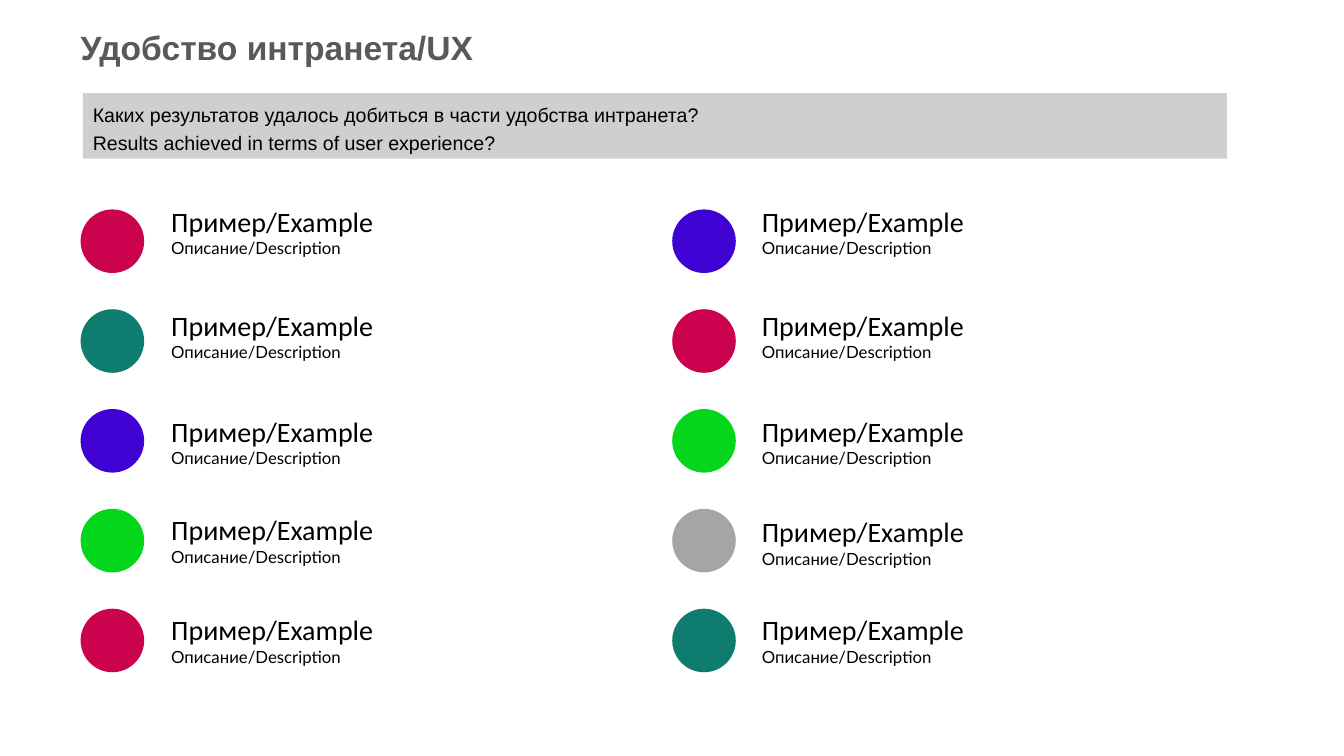
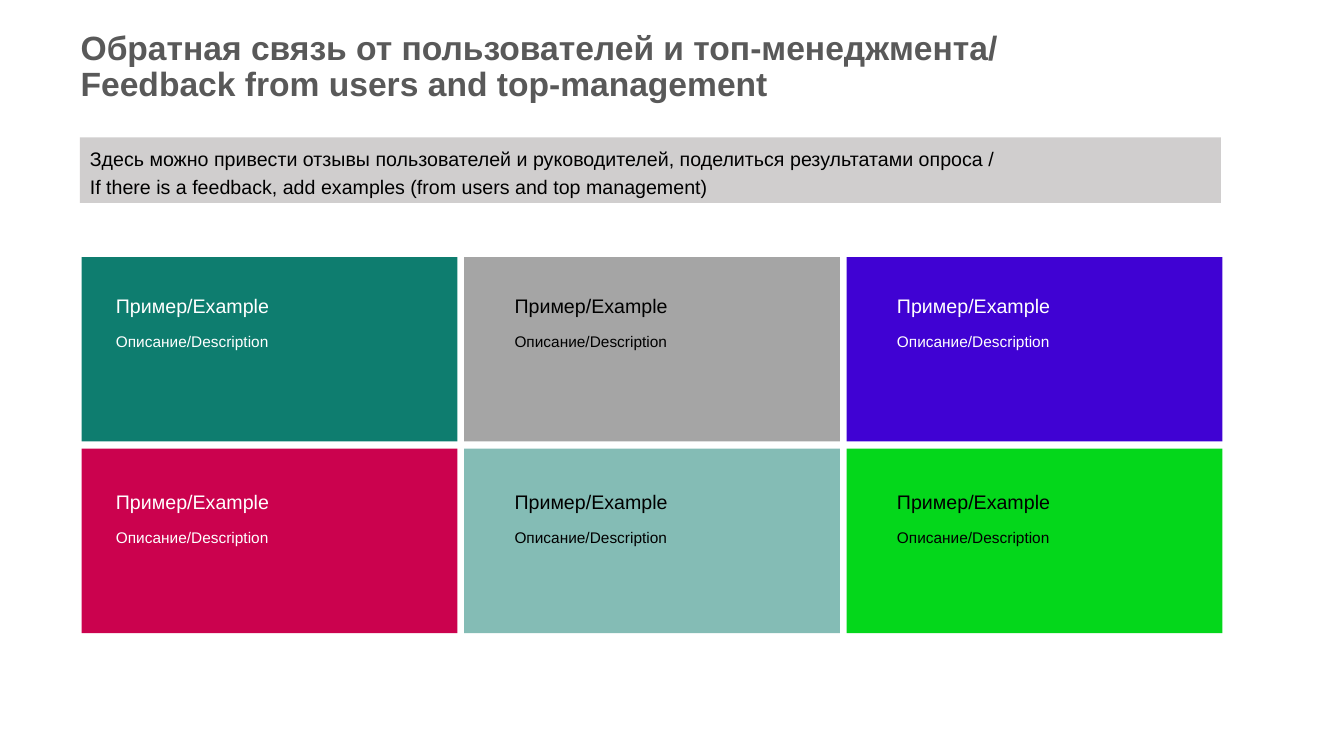
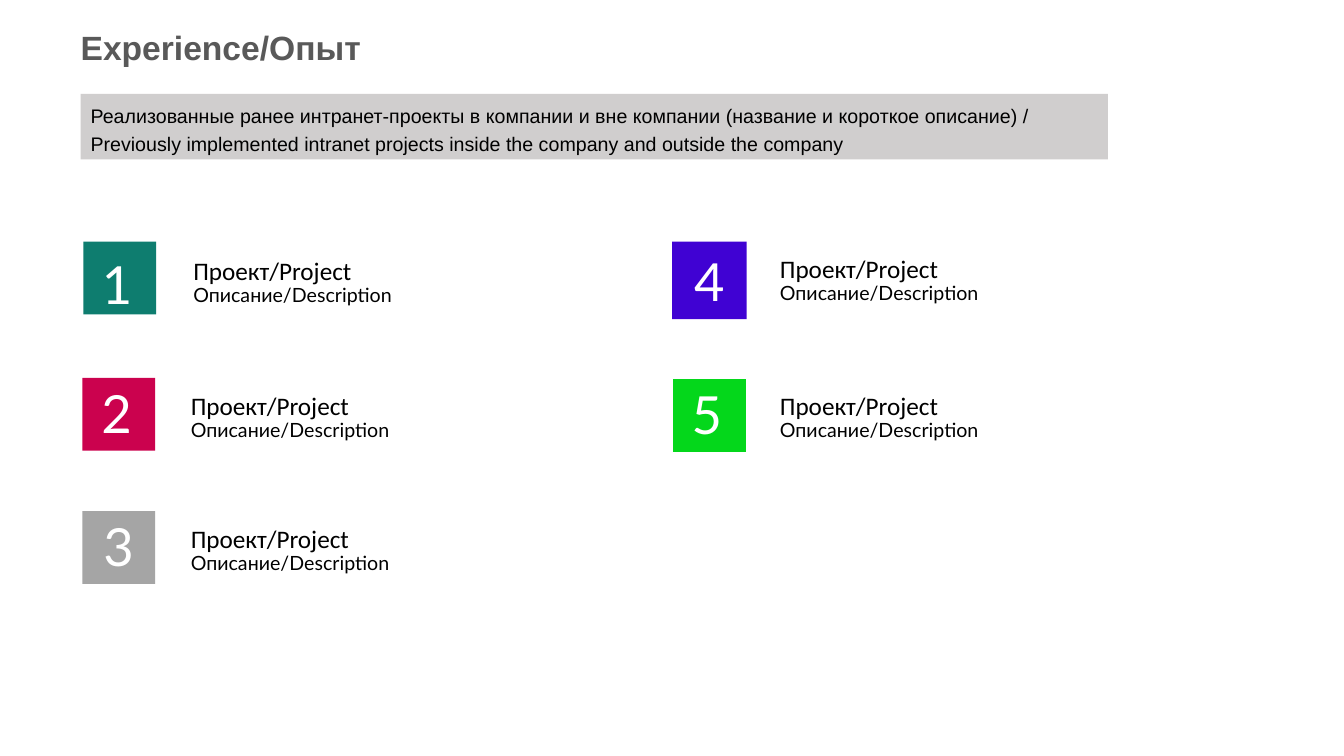
from dataclasses import dataclass
from typing import NamedTuple

from lxml import etree
from pptx import Presentation
from pptx.dml.color import RGBColor
from pptx.enum import shapes, text
from pptx.oxml import ns
from pptx.util import Pt


@dataclass(frozen=True)
class Theme:
    teal: str = "0E7D6F"
    crimson: str = "CB024E"
    violet: str = "4002D3"
    green: str = "04D71B"
    grey: str = "A5A5A5"
    band: str = "D0CECE"
    heading: str = "595959"
    black: str = "000000"
    white: str = "FFFFFF"
    sans: str = "Arial"
    name_font: str = "Calibri"
    detail_font: str = "Lato"
    heading_size: float = 24
    example_size: float = 20
    project_size: float = 18
    body_size: float = 14
    detail_size: float = 12
    card_detail_size: float = 11
    digit_size: float = 37.5


THEME = Theme()
EXAMPLE = "Пример/Example"
PROJECT = "Проект/Project"
DESCRIPTION = "Описание/Description"


class Box(NamedTuple):
    left: float
    top: float
    width: float
    height: float


class Margins(NamedTuple):
    left: float = 7.2
    top: float = 3.6
    right: float = 7.2
    bottom: float = 3.6


@dataclass(frozen=True)
class Card:
    column: int
    row: int
    fill: str
    ink: str
    opacity: int = 100


@dataclass(frozen=True)
class Project:
    number: str
    fill: str
    tile: Box
    label_left: float
    label_top: float
    digit_top: float = 2.2
    digit_right: float = 0


# Shared helpers
def set_frame(frame, margins: Margins = Margins()) -> None:
    frame.word_wrap = True
    frame.auto_size = text.MSO_AUTO_SIZE.NONE
    frame.vertical_anchor = text.MSO_ANCHOR.TOP
    frame.margin_left, frame.margin_top, frame.margin_right, frame.margin_bottom = map(Pt, margins)


def write(frame, words: str, *, size: float, font: str = THEME.sans, color: str = THEME.black,
          bold: bool = False, spacing: float = 1.0, before: float = 0,
          align=text.PP_ALIGN.LEFT) -> None:
    """Fill the empty first paragraph of the frame, or append a new one."""
    paragraph = frame.paragraphs[-1]
    if paragraph.runs:
        paragraph = frame.add_paragraph()
    paragraph.alignment = align
    paragraph.line_spacing = spacing
    paragraph.space_before = Pt(before)
    run = paragraph.add_run()
    run.text = words
    run.font.name, run.font.size, run.font.bold = font, Pt(size), bold
    run.font.color.rgb = RGBColor.from_string(color)


def add_shape(slide, box: Box, fill: str, *, kind=shapes.MSO_SHAPE.RECTANGLE, opacity: int = 100):
    shape = slide.shapes.add_shape(kind, *map(Pt, box))
    shape.shadow.inherit = False
    shape.fill.solid()
    shape.fill.fore_color.rgb = RGBColor.from_string(fill)
    shape.line.fill.background()
    if opacity < 100:
        color = shape.element.spPr.find(".//" + ns.qn("a:srgbClr"))
        etree.SubElement(color, ns.qn("a:alpha")).set("val", str(opacity * 1000))
    return shape


def add_label(slide, box: Box):
    frame = slide.shapes.add_textbox(*map(Pt, box)).text_frame
    set_frame(frame)
    return frame


def start_slide(deck, heading: str, heading_width: float, band: Box, questions: list[str]):
    """Add a slide with its heading and the grey question band."""
    slide = deck.slides.add_slide(deck.slide_layouts[5])
    title = slide.shapes.title
    title.left, title.top, title.width, title.height = map(Pt, Box(50.4, 18.7, heading_width, 51.1))
    set_frame(title.text_frame)
    write(title.text_frame, heading, size=THEME.heading_size, color=THEME.heading,
          bold=True, spacing=0.9)
    frame = add_shape(slide, band, THEME.band).text_frame
    set_frame(frame)
    for question in questions:
        write(frame, question, size=THEME.body_size, spacing=1.2)
    return slide


# Slide 1: two columns of circles with examples
def build_experience_of_users(deck) -> None:
    slide = start_slide(
        deck, "Удобство интранета/UX", 530.6, Box(59.2, 66.5, 817.2, 46.8),
        ["Каких результатов удалось добиться в части удобства интранета?",
         "Results achieved in terms of user experience?"])
    t = THEME
    columns = (
        (57.6, 115.2, (t.crimson, t.teal, t.violet, t.green, t.crimson),
         (142.6, 216.9, 292.3, 362.9, 434.2)),
        (480.2, 537.1, (t.violet, t.crimson, t.green, t.grey, t.teal),
         (142.6, 216.9, 292.3, 364.3, 434.2)),
    )
    for circle_left, label_left, fills, label_tops in columns:
        for row, (fill, label_top) in enumerate(zip(fills, label_tops)):
            add_shape(slide, Box(circle_left, 149.6 + 71.3 * row, 45.4, 45.4), fill,
                      kind=shapes.MSO_SHAPE.OVAL)
            frame = add_label(slide, Box(label_left, label_top, 191.5, 46.1))
            write(frame, EXAMPLE, size=t.example_size, font=t.name_font)
            write(frame, DESCRIPTION, size=t.detail_size, font=t.detail_font)


# Slide 2: grid of feedback cards
def build_feedback(deck) -> None:
    slide = start_slide(
        deck, "Обратная связь от пользователей и топ-менеджмента/ "
        "Feedback from users and top-management", 715.7, Box(57.1, 98.1, 815, 46.8),
        ["Здесь можно привести отзывы пользователей и руководителей, поделиться результатами опроса /",
         "If there is a feedback, add examples (from users and top management)"])
    t = THEME
    cards = (
        Card(0, 0, t.teal, t.white),
        Card(1, 0, t.grey, t.black),
        Card(2, 0, t.violet, t.white),
        Card(0, 1, t.crimson, t.white),
        Card(1, 1, t.teal, t.black, opacity=51),
        Card(2, 1, t.green, t.black),
    )
    for card in cards:
        box = Box(58.3 + 273.2 * card.column, 183.6 + 136.8 * card.row, 268.4, 131.8)
        frame = add_shape(slide, box, card.fill, opacity=card.opacity).text_frame
        set_frame(frame, Margins(left=36 if card.column else 24.5, top=29.5 if card.row else 26.6))
        write(frame, EXAMPLE, size=t.body_size, color=card.ink)
        write(frame, DESCRIPTION, size=t.card_detail_size, color=card.ink, before=10.5)


# Slide 3: numbered projects
def build_projects(deck) -> None:
    slide = start_slide(
        deck, "Experience/Опыт", 454.3, Box(57.6, 67, 733.7, 46.8),
        ["Реализованные ранее интранет-проекты в компании и вне компании (название и короткое описание) / "
         "Previously implemented intranet projects inside the company and outside the company"])
    t = THEME
    side = 52
    projects = (
        Project("1", t.teal, Box(59.5, 172.6, side, side), 131, 172.1, 7.2, 3.6),
        Project("2", t.crimson, Box(58.8, 270, side, side), 129.2, 268.9, digit_right=2.9),
        Project("3", t.grey, Box(58.8, 365.2, side, side), 129.2, 363.6),
        Project("4", t.violet, Box(480.1, 172.6, 53.2, 55.3), 550, 170.9, 5),
        Project("5", t.green, Box(480.8, 270.9, side, side), 550, 268.9, digit_right=3.6),
    )
    for project in projects:
        tile = add_shape(slide, project.tile, project.fill).text_frame
        set_frame(tile, Margins(0, project.digit_top, project.digit_right, 0))
        write(tile, project.number, size=t.digit_size, font=t.detail_font, color=t.white,
              align=text.PP_ALIGN.CENTER)
        frame = add_label(slide, Box(project.label_left, project.label_top, 208.8, 52))
        write(frame, PROJECT, size=t.project_size, font=t.name_font, spacing=1.3)
        write(frame, DESCRIPTION, size=t.body_size, font=t.detail_font, spacing=0.9)


def main() -> None:
    deck = Presentation()
    deck.slide_width, deck.slide_height = Pt(960), Pt(540)
    build_experience_of_users(deck)
    build_feedback(deck)
    build_projects(deck)
    deck.save("out.pptx")


if __name__ == "__main__":
    main()
